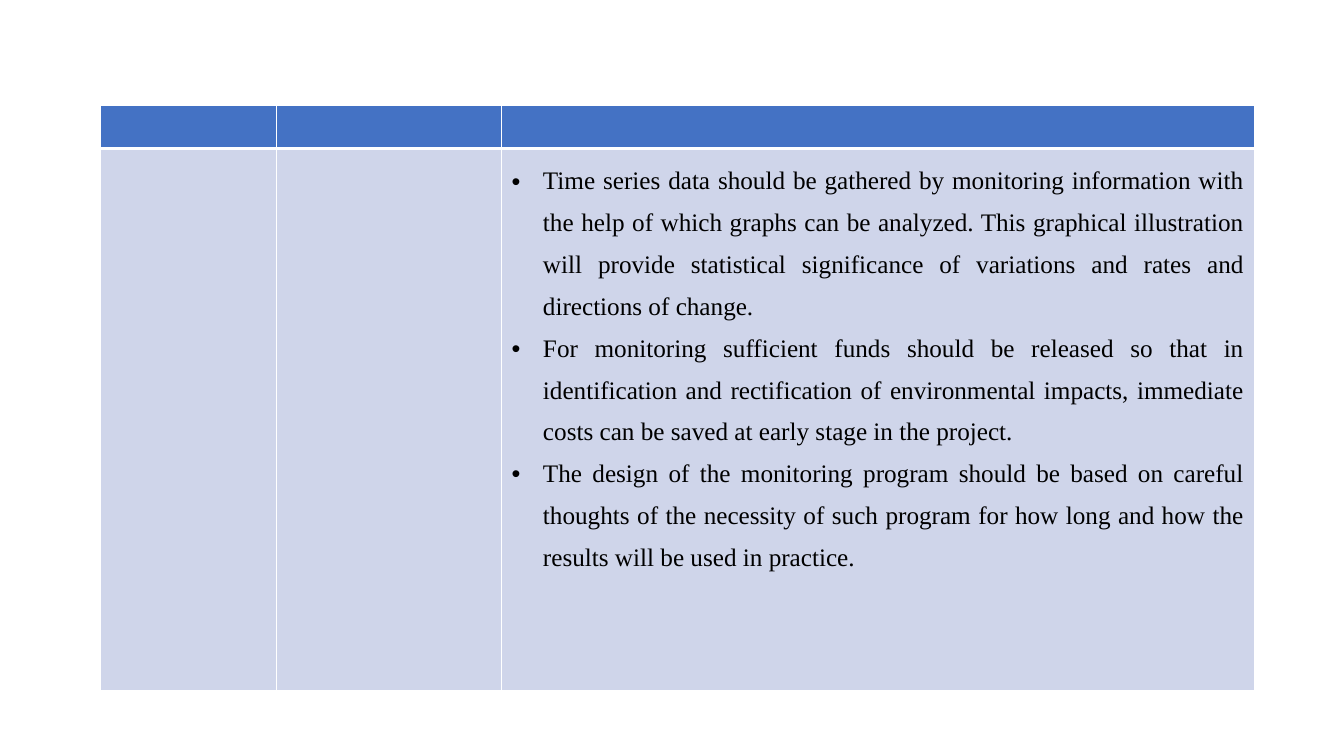
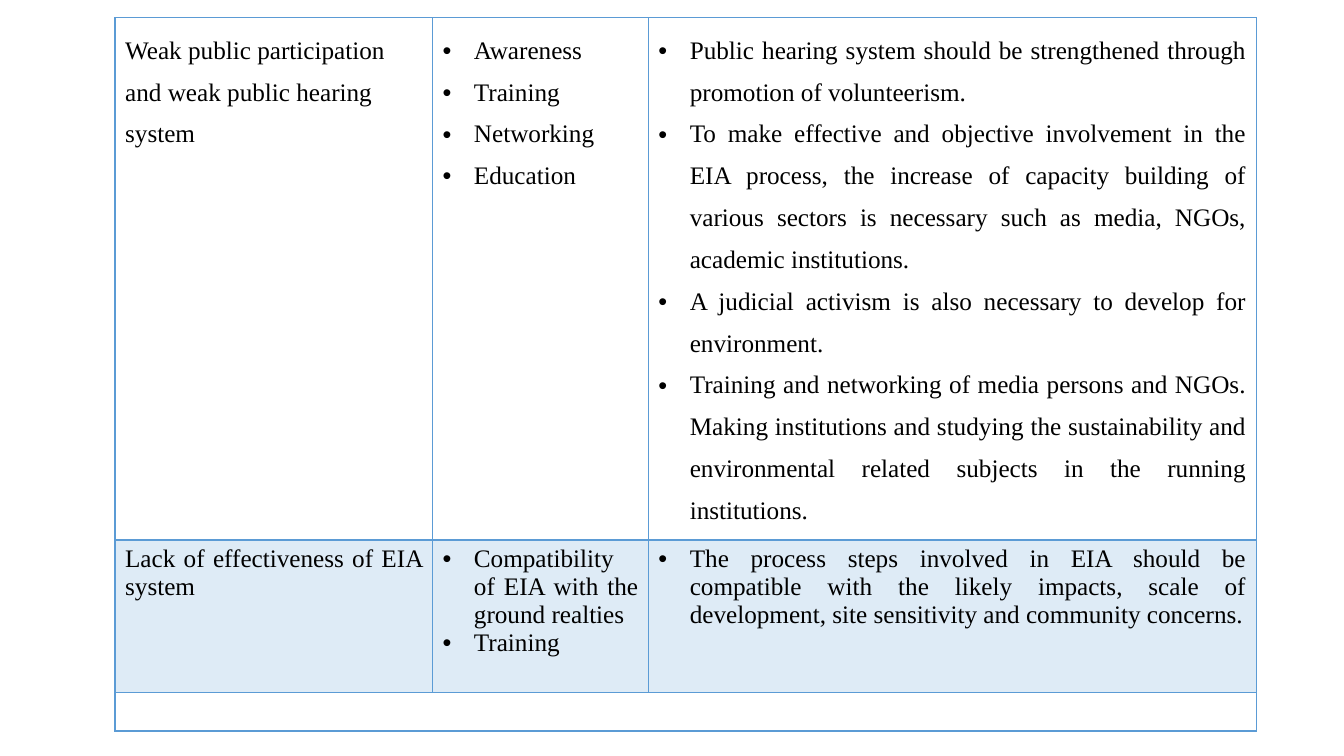
from lxml.etree import SubElement
from pptx import Presentation
from pptx.dml.color import RGBColor
from pptx.enum.text import PP_ALIGN
from pptx.oxml import parse_xml
from pptx.oxml.ns import nsdecls, qn
from pptx.util import Cm, Pt

COLORS = {"header": "4472C4", "body": "CFD5EA", "accent": "5B9BD5",
          "white": "FFFFFF", "text": "000000"}
FONT = "Times New Roman"
INDENT = Cm(0.79)


def add_grid(s, left, top, cols, rows, line, rule):
    """Add a plain table with thin lines and a heavier rule below its first row."""
    t = s.shapes.add_table(len(rows), len(cols), Cm(left), Cm(top),
                           Cm(sum(cols)), Cm(sum(rows))).table
    t.first_row = t.horz_banding = False
    for col, width in zip(t.columns, cols):
        col.width = Cm(width)
    for r, height in enumerate(rows):
        t.rows[r].height = Cm(height)
        widths = {"L": 1, "R": 1, "T": rule if r == 1 else 1, "B": rule if r == 0 else 1}
        for c in range(len(cols)):
            cell = t.cell(r, c)
            cell.fill.background()
            tcPr = cell._tc.get_or_add_tcPr()
            for i, (side, width) in enumerate(widths.items()):
                tcPr.insert(i, parse_xml(
                    f'<a:ln{side} {nsdecls("a")} w="{Pt(width)}"><a:solidFill>'
                    f'<a:srgbClr val="{line}"/></a:solidFill></a:ln{side}>'))
    return t


def add_text(cell, lines, bullets=True, spacing=1.5):
    """Write justified paragraphs into a cell, bulleted if wanted."""
    tf = cell.text_frame
    for i, line in enumerate(lines):
        p = tf.add_paragraph() if i else tf.paragraphs[0]
        p.alignment = PP_ALIGN.JUSTIFY
        p.line_spacing = spacing
        if bullets:
            pPr = p._p.get_or_add_pPr()
            pPr.set("marL", str(INDENT))
            pPr.set("indent", str(-INDENT))
            SubElement(pPr, qn("a:buFont")).set("typeface", "Arial")
            SubElement(pPr, qn("a:buChar")).set("char", "•")
        r = p.add_run()
        r.text = line
        r.font.name = FONT
        r.font.size = Pt(18)
        r.font.color.rgb = RGBColor.from_string(COLORS["text"])


prs = Presentation()
prs.slide_width, prs.slide_height = Cm(33.87), Cm(19.05)
blank = prs.slide_layouts[6]

# Slide 1: monitoring recommendations
s = prs.slides.add_slide(blank)
t = add_grid(s, 2.54, 2.65, [4.43, 5.67, 18.97], [1.09, 13.66], COLORS["white"], 3)
for row, color in zip(t.rows, ("header", "body")):
    for cell in row.cells:
        cell.fill.solid()
        cell.fill.fore_color.rgb = RGBColor.from_string(COLORS[color])
add_text(t.cell(1, 2), [
    "Time series data should be gathered by monitoring information with the help of which "
    "graphs can be analyzed. This graphical illustration will provide statistical "
    "significance of variations and rates and directions of change.",
    "For monitoring sufficient funds should be released so that in identification and "
    "rectification of environmental impacts, immediate costs can be saved at early stage "
    "in the project.",
    "The design of the monitoring program should be based on careful thoughts of the "
    "necessity of such program for how long and how the results will be used in practice.",
])

# Slide 2: public participation and effectiveness
s = prs.slides.add_slide(blank)
t = add_grid(s, 2.9, 0.45, [8, 5.44, 15.32], [13.16, 3.84, 0.97], COLORS["accent"], 2.25)
add_text(t.cell(0, 0), ["Weak public participation", "and weak public hearing", "system"],
         bullets=False)
add_text(t.cell(0, 1), ["Awareness", "Training", "Networking", "Education"])
add_text(t.cell(0, 2), [
    "Public hearing system should be strengthened through promotion of volunteerism.",
    "To make effective and objective involvement in the EIA process, the increase of "
    "capacity building of various sectors is necessary such as media, NGOs, academic "
    "institutions.",
    "A judicial activism is also necessary to develop for environment.",
    "Training and networking of media persons and NGOs. Making institutions and studying "
    "the sustainability and environmental related subjects in the running institutions.",
])

# Tinted second row
for cell in t.rows[1].cells:
    cell.fill.solid()
    cell.fill.fore_color.rgb = RGBColor.from_string(COLORS["accent"])
    tint = cell._tc.tcPr.find(qn("a:solidFill")).find(qn("a:srgbClr"))
    SubElement(tint, qn("a:alpha")).set("val", "20000")
add_text(t.cell(1, 0), ["Lack of effectiveness of EIA system"], bullets=False, spacing=1.0)
add_text(t.cell(1, 1), ["Compatibility of EIA with the ground realties", "Training"],
         spacing=1.0)
add_text(t.cell(1, 2), [
    "The process steps involved in EIA should be compatible with the likely impacts, scale "
    "of development, site sensitivity and community concerns.",
], spacing=1.0)

# Empty closing row across all columns
t.cell(2, 0).merge(t.cell(2, 2))
for cell in t.rows[2].cells:
    cell.margin_top = cell.margin_bottom = 0

prs.save("out.pptx")
